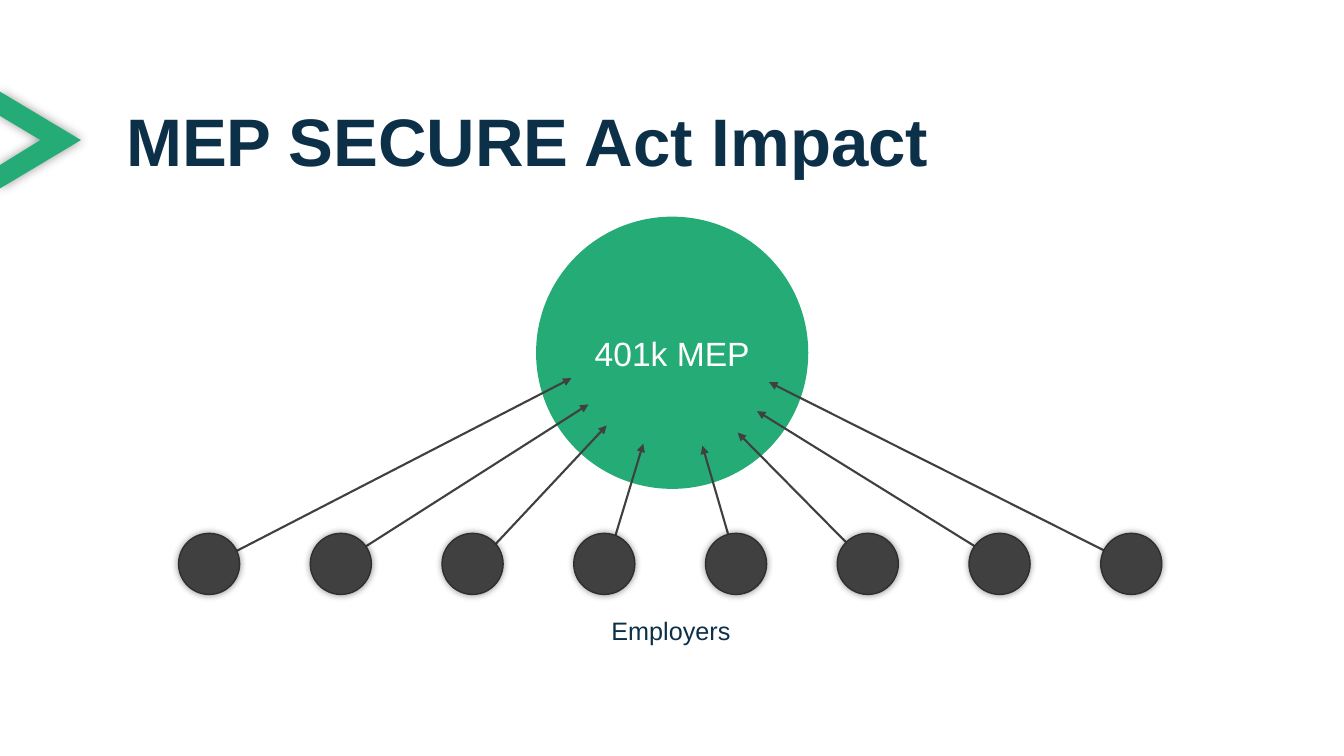
from dataclasses import dataclass

from lxml.etree import SubElement
from pptx import Presentation
from pptx.dml.color import RGBColor
from pptx.enum.shapes import MSO_CONNECTOR as Connector, MSO_SHAPE as Shape
from pptx.enum.text import MSO_ANCHOR as Anchor, PP_ALIGN as Align
from pptx.oxml.ns import qn
from pptx.util import Cm, Pt


@dataclass(frozen=True)
class Theme:
    font: str = "Arial"
    green: RGBColor = RGBColor.from_string("24AB76")
    navy: RGBColor = RGBColor.from_string("0D3049")
    gray: RGBColor = RGBColor.from_string("414041")
    outline: RGBColor = RGBColor.from_string("302F30")
    white: RGBColor = RGBColor.from_string("FFFFFF")
    title_size: Pt = Pt(48)
    plan_size: Pt = Pt(24)
    label_size: Pt = Pt(18)


theme = Theme()


def write(shape, text, size, color, bold=False):
    """Put one styled paragraph in the shape and return it."""
    paragraph = shape.text_frame.paragraphs[0]
    paragraph.text = text
    font = paragraph.font
    font.name, font.size, font.bold = theme.font, size, bold
    font.color.rgb = color
    return paragraph


def add_glow_shadow(shape, blur):
    """Add a centred soft black shadow; fill and line must be set first."""
    shape.shadow.inherit = False
    effects = shape._element.spPr.find(qn("a:effectLst"))
    shadow = SubElement(effects, qn("a:outerShdw"), blurRad=str(blur),
                        dist="0", dir="0", algn="ctr", rotWithShape="0")
    black = SubElement(shadow, qn("a:srgbClr"), val="000000")
    SubElement(black, qn("a:alpha"), val="40000")


presentation = Presentation()
presentation.slide_width = Cm(33.87)
presentation.slide_height = Cm(19.05)
slide = presentation.slides.add_slide(presentation.slide_layouts[6])
shapes = slide.shapes

# Chevron at the left edge
chevron_points = [(0, 2.92), (1.02, 3.53), (0, 4.16), (0, 4.75), (2.04, 3.53)]
builder = shapes.build_freeform(0, Cm(2.31))
builder.add_line_segments([(Cm(x), Cm(y)) for x, y in chevron_points], close=True)
chevron = builder.convert_to_shape()
chevron.fill.solid()
chevron.fill.fore_color.rgb = theme.green
chevron.line.fill.background()
add_glow_shadow(chevron, Pt(8))

# Title
title = shapes.add_textbox(Cm(3.18), Cm(2.82), Cm(27.48), Cm(3.15))
frame = title.text_frame
frame.word_wrap = True
frame.margin_left = frame.margin_right = frame.margin_top = frame.margin_bottom = 0
write(title, "MEP SECURE Act Impact", theme.title_size, theme.navy,
      bold=True).line_spacing = 0.85

# Shared plan
plan = shapes.add_shape(Shape.OVAL, Cm(13.51), Cm(5.46), Cm(6.86), Cm(6.86))
plan.shadow.inherit = False
plan.fill.solid()
plan.fill.fore_color.rgb = theme.green
plan.line.fill.background()
plan.text_frame.word_wrap = True
plan.text_frame.vertical_anchor = Anchor.MIDDLE
write(plan, "401k MEP", theme.plan_size, theme.white).alignment = Align.CENTER

# Arrows from the employers to the plan: start x, tip x, tip y
arrows = [
    (5.31, 14.4, 9.53), (8.51, 14.83, 10.19), (12.01, 15.29, 10.72), (15.29, 16.21, 11.18),
    (18.57, 17.7, 11.23), (21.87, 18.59, 10.9), (25.3, 19.08, 10.36), (28.52, 19.38, 9.63),
]
for start_x, tip_x, tip_y in arrows:
    arrow = shapes.add_connector(Connector.STRAIGHT, Cm(start_x), Cm(14.22),
                                 Cm(tip_x), Cm(tip_y))
    arrow.line.color.rgb = theme.gray
    arrow.line.width = Pt(1.5)
    SubElement(arrow.line._get_or_add_ln(), qn("a:tailEnd"), type="triangle")
    SubElement(arrow._element.spPr, qn("a:effectLst"))

# Evenly spaced employers
employer_left, employer_pitch, employer_size = 4.5, 3.32, 1.54
for index in range(len(arrows)):
    employer = shapes.add_shape(Shape.OVAL, Cm(employer_left + index * employer_pitch),
                                Cm(13.44), Cm(employer_size), Cm(employer_size))
    employer.fill.solid()
    employer.fill.fore_color.rgb = theme.gray
    employer.line.color.rgb = theme.outline
    employer.line.width = Pt(1)
    add_glow_shadow(employer, Pt(5))

label = shapes.add_textbox(Cm(15.16), Cm(15.39), Cm(3.53), Cm(1.02))
label.text_frame.word_wrap = False
write(label, "Employers", theme.label_size, theme.navy)

presentation.save("out.pptx")
